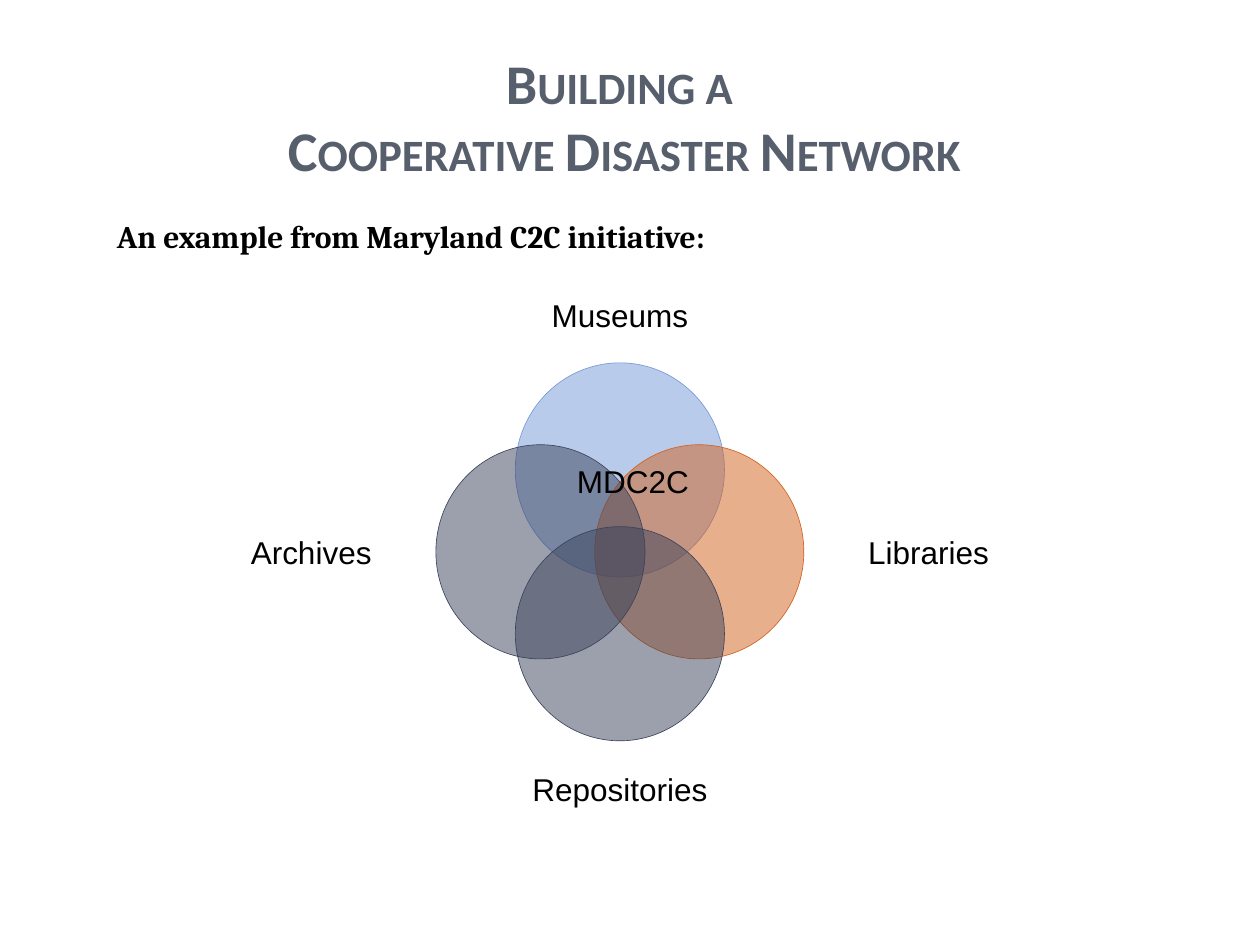
from lxml.etree import SubElement
from pptx import Presentation
from pptx.dml.color import RGBColor
from pptx.enum.shapes import MSO_SHAPE
from pptx.enum.text import MSO_ANCHOR, PP_ALIGN
from pptx.oxml.ns import qn
from pptx.util import Inches, Pt

BLACK = RGBColor(0x00, 0x00, 0x00)
SLATE = RGBColor(0x57, 0x5F, 0x6D)
BLUE = RGBColor(0x75, 0x98, 0xD9)
ORANGE = RGBColor(0xD2, 0x61, 0x1C)
NAVY = RGBColor(0x3B, 0x43, 0x5B)

TITLE = ["Building a ", "Cooperative Disaster Network"]
SUBTITLE = "An example from Maryland C2C initiative:"
SHARED = "MDC2C"
MEMBERS = [
    ("Museums", BLUE, 0, -1),
    ("Libraries", ORANGE, 1, 0),
    ("Repositories", NAVY, 0, 1),
    ("Archives", NAVY, -1, 0),
]

CENTER = (4.92, 4.38)
CIRCLE = (1.66, 1.7)
CIRCLE_REACH = (0.63, 0.65)
LABEL = (1.66, 0.42)
LABEL_REACH = (2.45, 1.88)


def place(size, reach, across, down):
    left = CENTER[0] + across * reach[0] - size[0] / 2
    top = CENTER[1] + down * reach[1] - size[1] / 2
    return [Inches(value) for value in (left, top, *size)]


def add_text(page, area, lines, font="Arial", size=18, color=BLACK, bold=False,
             align=PP_ALIGN.LEFT, anchor=MSO_ANCHOR.TOP, wrap=False, small_caps=False):
    box = page.shapes.add_textbox(*area)
    frame = box.text_frame
    frame.word_wrap = wrap
    frame.vertical_anchor = anchor
    para = frame.paragraphs[0]
    para.alignment = align
    for index, line in enumerate(lines):
        if index:
            para.add_line_break()
        span = para.add_run()
        span.text = line
        span.font.name = font
        span.font.size = Pt(size)
        span.font.bold = bold
        span.font.color.rgb = color
        if small_caps:
            span.font._element.set("cap", "small")


def add_circle(page, area, color):
    circle = page.shapes.add_shape(MSO_SHAPE.OVAL, *area)
    circle.shadow.inherit = False
    circle.fill.solid()
    circle.fill.fore_color.rgb = color
    shade = circle._element.spPr.find(qn("a:solidFill"))[0]
    SubElement(shade, qn("a:alpha")).set("val", "50000")
    circle.line.color.rgb = color
    circle.line.width = Pt(0.37)


def main():
    deck = Presentation()
    deck.slide_width, deck.slide_height = Inches(10), Inches(7.5)
    page = deck.slides.add_slide(deck.slide_layouts[6])

    title_area = [Inches(value) for value in (0.33, 0.33, 9.25, 1.17)]
    add_text(page, title_area, TITLE, "Calibri", 32, SLATE, True,
             PP_ALIGN.CENTER, MSO_ANCHOR.BOTTOM, True, True)

    for name, color, across, down in MEMBERS:
        add_circle(page, place(CIRCLE, CIRCLE_REACH, across, down), color)
        add_text(page, place(LABEL, LABEL_REACH, across, down), [name],
                 align=PP_ALIGN.CENTER, anchor=MSO_ANCHOR.MIDDLE)

    shared_area = [Inches(value) for value in (4.48, 3.62, 1.09, 0.4)]
    add_text(page, shared_area, [SHARED])
    subtitle_area = [Inches(value) for value in (0.83, 1.67, 5.75, 0.4)]
    add_text(page, subtitle_area, [SUBTITLE], "Cambria", bold=True)

    deck.save("out.pptx")


if __name__ == "__main__":
    main()
